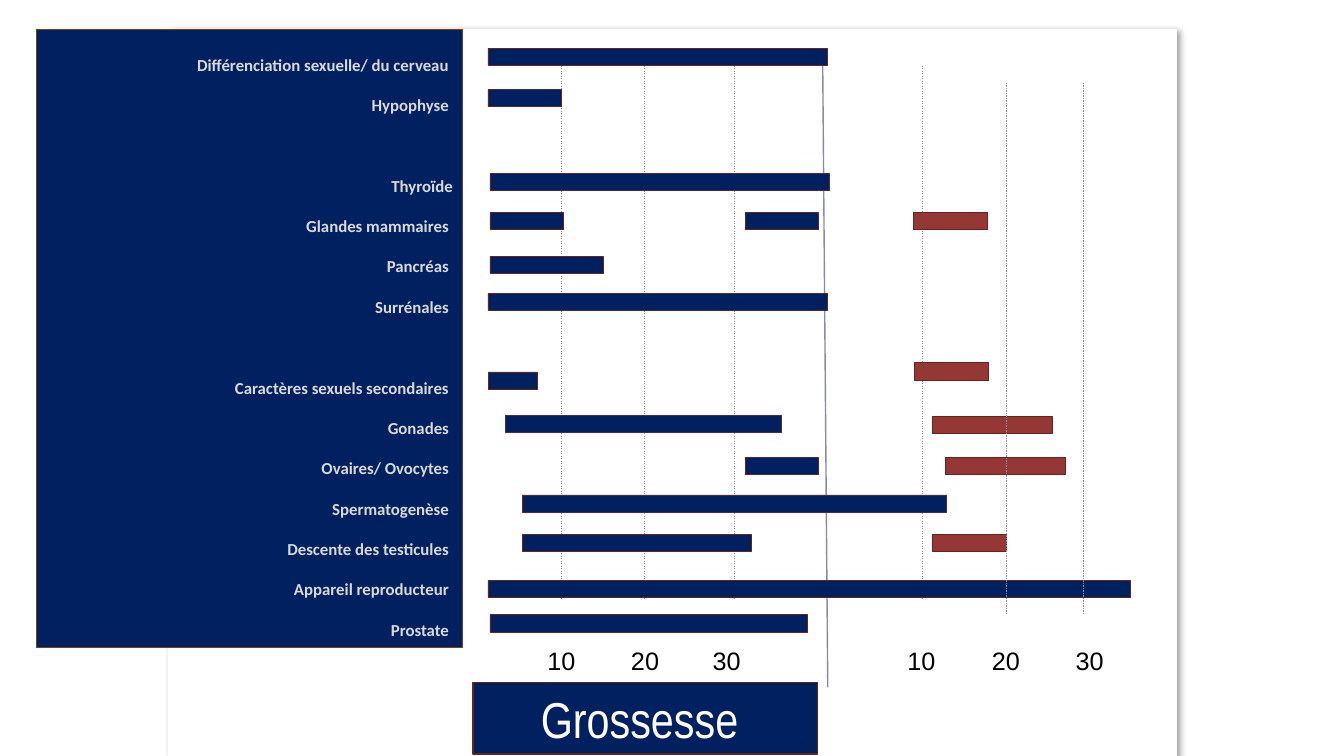
from collections import namedtuple

from lxml.etree import SubElement
from pptx import Presentation
from pptx.dml.color import RGBColor
from pptx.enum.dml import MSO_LINE
from pptx.enum.shapes import MSO_CONNECTOR, MSO_SHAPE
from pptx.enum.text import MSO_ANCHOR, PP_ALIGN
from pptx.oxml.ns import qn
from pptx.util import Inches, Pt

NAVY = RGBColor(0x00, 0x20, 0x60)
RED = RGBColor(0x95, 0x37, 0x35)
DARK_RED = RGBColor(0x63, 0x25, 0x23)
BROWN = RGBColor(0x84, 0x3C, 0x0B)
GRID = RGBColor(0x8A, 0x8A, 0xA3)
GREY = RGBColor(0x80, 0x80, 0x80)
LIGHT_GREY = RGBColor(0xD9, 0xD9, 0xD9)
WHITE = RGBColor(0xFF, 0xFF, 0xFF)
BLACK = RGBColor(0x00, 0x00, 0x00)

ORGAN_FONT = {"name": "Calibri", "size": Pt(12), "bold": True}
WEEK_FONT = {"name": "Arial", "size": Pt(18)}
PERIOD_FONT = {"name": "Arial Narrow", "size": Pt(36)}

Box = namedtuple("Box", "left top width height")

# Each group of organs is set apart by one empty line
ORGAN_GROUPS = [
    ["Différenciation sexuelle/ du cerveau ", "Hypophyse "],
    ["Thyroïde", "Glandes mammaires ", "Pancréas ", "Surrénales "],
    ["Caractères sexuels secondaires ", "Gonades ", "Ovaires/ Ovocytes ",
     "Spermatogenèse ", "Descente des testicules ", "Appareil reproducteur ",
     "Prostate "],
]

# Left, top and width of each period, in inches from the chart corner
BAR_HEIGHT = 0.17
PREGNANCY_PERIODS = [
    (0, 0, 3.37), (0, 0.41, 0.73), (0.02, 1.24, 3.37), (0.02, 1.63, 0.73),
    (2.55, 1.63, 0.73), (0.02, 2.06, 1.12), (0, 2.43, 3.37), (0, 3.21, 0.49),
    (0.17, 3.64, 2.74), (2.55, 4.06, 0.73), (0.34, 4.43, 4.21),
    (0.34, 4.82, 2.27), (0, 5.28, 6.37), (0.02, 5.62, 3.15),
]
LATER_PERIODS = [
    (4.22, 1.63, 0.73), (4.23, 3.12, 0.73), (4.41, 3.65, 1.19),
    (4.54, 4.06, 1.19), (4.41, 4.82, 0.73),
]

# Position of each grid line and of its week number, then colour
WEEKS_BEHIND = [("10", 0.73, 0.49, GREY), ("20", 1.55, 1.32, GRID),
                ("30", 2.44, 2.13, GRID), ("10", 4.31, 4.06, GRID)]
WEEKS_IN_FRONT = [("20", 5.14, 4.9, GRID), ("30", 5.9, 5.73, GRID)]


def style_font(font, values, color):
    for key, value in values.items():
        setattr(font, key, value)
    font.color.rgb = color


def add_rect(slide, box, fill, line, line_width):
    rect = slide.shapes.add_shape(MSO_SHAPE.RECTANGLE, *map(Inches, box))
    rect.shadow.inherit = False
    rect.fill.solid()
    rect.fill.fore_color.rgb = fill
    rect.line.color.rgb = line
    rect.line.width = Pt(line_width)
    return rect


def add_line(slide, start, end, color, width, dash=None):
    line = slide.shapes.add_connector(
        MSO_CONNECTOR.STRAIGHT, *map(Inches, (*start, *end)))
    line.line.color.rgb = color
    line.line.width = Pt(width)
    if dash:
        line.line.dash_style = dash
    SubElement(line._element.spPr, qn("a:effectLst"))


def add_panel(slide, box):
    panel = add_rect(slide, box, WHITE, WHITE, 1)
    effects = panel._element.spPr.find(qn("a:effectLst"))
    shadow = SubElement(effects, qn("a:outerShdw"), blurRad=str(Pt(4)),
                        dist=str(Pt(3)), dir="2700000", algn="tl",
                        rotWithShape="0")
    tint = SubElement(shadow, qn("a:srgbClr"), val=str(BLACK))
    SubElement(tint, qn("a:alpha"), val="40000")


def add_organs(slide, box):
    frame = add_rect(slide, box, NAVY, BROWN, 0.5).text_frame
    frame.word_wrap = True
    frame.vertical_anchor = MSO_ANCHOR.TOP
    paragraph = frame.paragraphs[0]
    for group_index, group in enumerate(ORGAN_GROUPS):
        for index, organ in enumerate(group):
            if group_index or index:
                paragraph = frame.add_paragraph()
            paragraph.alignment = PP_ALIGN.RIGHT
            paragraph.line_spacing = 2.0
            if group_index and index == 0:
                paragraph.space_before = Pt(29)
            run = paragraph.add_run()
            run.text = organ
            style_font(run.font, ORGAN_FONT, LIGHT_GREY)


def add_weeks(slide, box, weeks, grid_top, grid_bottom):
    for week, line_left, label_left, color in weeks:
        x = box.left + line_left
        add_line(slide, (x, box.top + grid_top), (x, box.top + grid_bottom),
                 color, 0.25, MSO_LINE.DASH)
        label_box = (box.left + label_left, box.top + 5.87, 0.48, 0.4)
        label = slide.shapes.add_textbox(*map(Inches, label_box))
        label.text_frame.word_wrap = False
        run = label.text_frame.paragraphs[0].add_run()
        run.text = week
        style_font(run.font, WEEK_FONT, BLACK)


def add_periods(slide, box, periods, fill):
    for left, top, width in periods:
        bar_box = (box.left + left, box.top + top, width, BAR_HEIGHT)
        add_rect(slide, bar_box, fill, DARK_RED, 0.5)


def add_timeline(slide, box):
    # Birth line between pregnancy and the weeks after it
    add_line(slide, (box.left + 3.32, box.top + 0.17),
             (box.left + 3.37, box.top + box.height), GRID, 1)
    add_weeks(slide, box, WEEKS_BEHIND, 0.17, 5.46)
    add_periods(slide, box, PREGNANCY_PERIODS, NAVY)
    add_periods(slide, box, LATER_PERIODS, RED)
    add_weeks(slide, box, WEEKS_IN_FRONT, 0.34, 5.62)


def add_pregnancy_caption(slide, box):
    frame = add_rect(slide, box, NAVY, DARK_RED, 1).text_frame
    frame.word_wrap = True
    frame.vertical_anchor = MSO_ANCHOR.MIDDLE
    frame.paragraphs[0].alignment = PP_ALIGN.CENTER
    run = frame.paragraphs[0].add_run()
    run.text = "Grossesse "
    style_font(run.font, PERIOD_FONT, WHITE)


def main():
    prs = Presentation()
    prs.slide_width = Inches(13.33)
    prs.slide_height = Inches(7.5)
    slide = prs.slides.add_slide(prs.slide_layouts[6])
    add_panel(slide, Box(1.67, 0.29, 10, 7.21))
    add_organs(slide, Box(0.36, 0.29, 4.23, 6.13))
    add_timeline(slide, Box(4.84, 0.48, 6.37, 6.34))
    add_pregnancy_caption(slide, Box(4.69, 6.77, 3.42, 0.71))
    prs.save("out.pptx")


if __name__ == "__main__":
    main()
